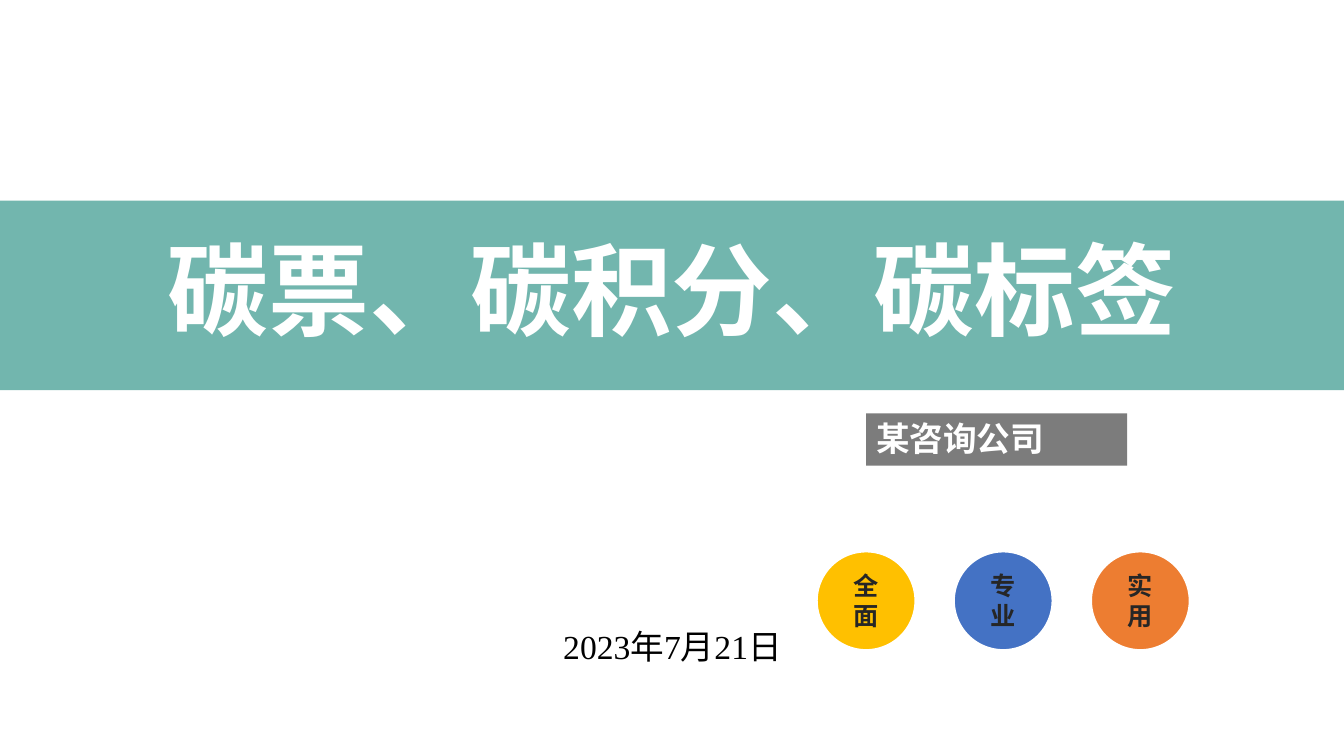
from dataclasses import dataclass
from lxml import etree
from pptx import Presentation
from pptx.dml.color import RGBColor
from pptx.enum.shapes import MSO_SHAPE
from pptx.enum.text import MSO_ANCHOR, PP_ALIGN
from pptx.oxml.ns import qn
from pptx.util import Inches, Pt

RECT, OVAL = MSO_SHAPE.RECTANGLE, MSO_SHAPE.OVAL
MID, TOP = MSO_ANCHOR.MIDDLE, MSO_ANCHOR.TOP
MIDDLE, JUST = PP_ALIGN.CENTER, PP_ALIGN.JUSTIFY

TITLE = "碳票、碳积分、碳标签"
FIRM = "某咨询公司"
DATE = "2023年7月21日"
BADGES = [("全面", "FFC000"), ("专业", "4472C4"), ("实用", "ED7D31")]


@dataclass(frozen=True)
class Theme:
    teal: str = "39998D"
    gray: str = "7C7C7C"
    white: str = "FFFFFF"
    dark: str = "262626"
    black: str = "000000"
    sans: str = "Calibri"
    serif: str = "Times New Roman"
    asian: str = "Noto Sans CJK SC"
    huge: int = 72
    large: int = 24
    small: int = 18


theme = Theme()
COLS, ROWS = 1333, 750
BAND = (0, 199, COLS, 188)
LABEL = (859, 410, 259, 52)
DAY = (167, 616, 1000, 54)
LEFT, LINE, SIZE, STEP = 810, 547, 98, 136

deck = Presentation()
deck.slide_width, deck.slide_height = Inches(13.33), Inches(7.5)
slide = deck.slides.add_slide(deck.slide_layouts[6])
UNIT_X, UNIT_Y = deck.slide_width / COLS, deck.slide_height / ROWS


def place(x, y, w, h):
    return [round(v * u) for v, u in zip((x, y, w, h), (UNIT_X, UNIT_Y) * 2)]


def write(shape, text, size, color, font, bold=True, align=MIDDLE, anchor=MID, space=1.0):
    frame = shape.text_frame
    frame.word_wrap = True
    frame.vertical_anchor = anchor
    para = frame.paragraphs[0]
    para.alignment, para.line_spacing = align, space
    run = para.add_run()
    run.text = text
    run.font.name, run.font.size, run.font.bold = font, Pt(size), bold
    run.font.color.rgb = RGBColor.from_string(color)
    latin = run.font._element.find(qn("a:latin"))
    asian = etree.Element(qn("a:ea"), typeface=theme.asian)
    latin.addnext(asian)


def draw(kind, cell, fill, edge=None):
    shape = slide.shapes.add_shape(kind, *place(*cell))
    shape.shadow.inherit = False
    shape.fill.solid()
    shape.fill.fore_color.rgb = RGBColor.from_string(fill)
    if edge:
        shape.line.color.rgb = RGBColor.from_string(edge)
        shape.line.width = Pt(1.5)
    else:
        shape.line.fill.background()
    return shape


band = draw(RECT, BAND, theme.teal)
tint = band._element.spPr.find(qn("a:solidFill"))[0]
etree.SubElement(tint, qn("a:alpha"), val="71000")
write(band, TITLE, theme.huge, theme.white, theme.sans, space=0.9)

day = slide.shapes.add_textbox(*place(*DAY))
write(day, DATE, theme.large, theme.black, theme.serif, bold=False, space=0.9)

label = draw(RECT, LABEL, theme.gray)
write(label, FIRM, theme.large, theme.white, theme.asian, align=JUST, anchor=TOP)

for i, (word, color) in enumerate(BADGES):
    badge = draw(OVAL, (LEFT + i * STEP, LINE, SIZE, SIZE), color, theme.white)
    write(badge, word, theme.small, theme.dark, theme.sans)

deck.save("out.pptx")
